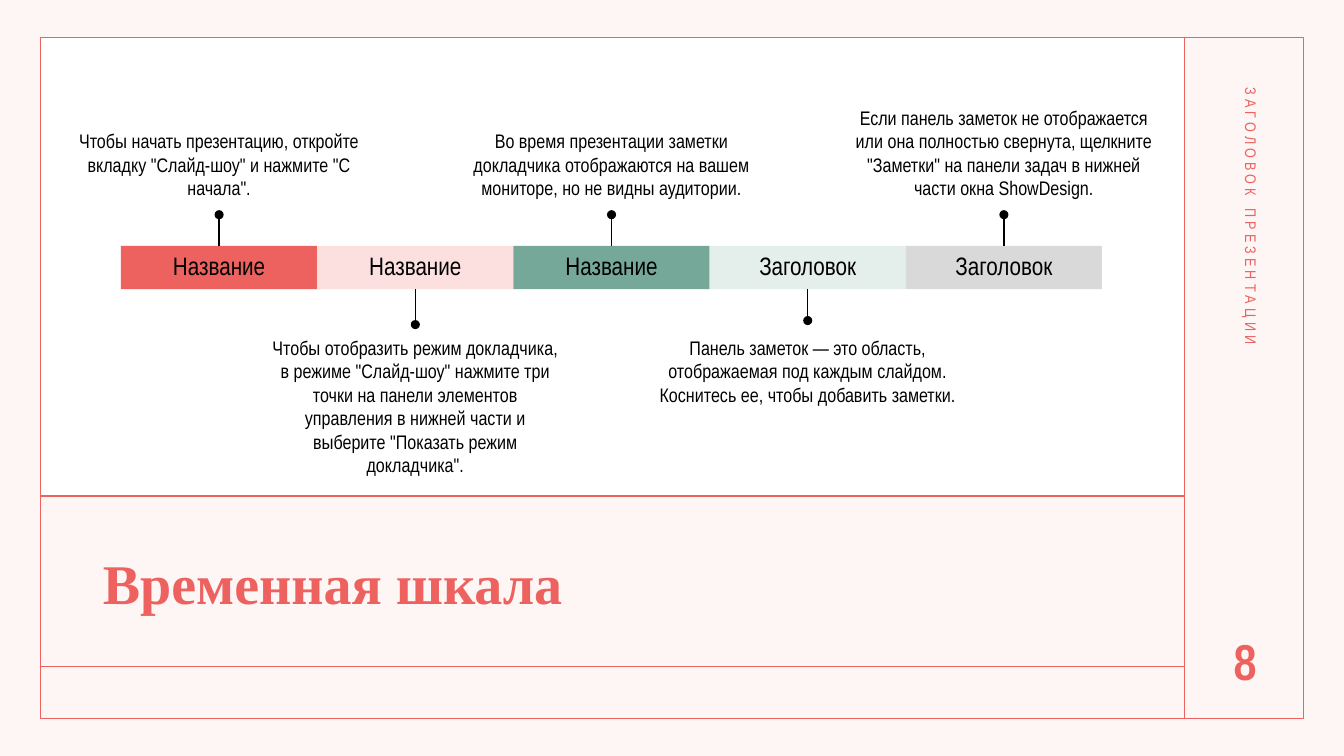
from lxml import etree
from pptx import Presentation
from pptx.dml.color import RGBColor
from pptx.enum.shapes import MSO_CONNECTOR, MSO_SHAPE
from pptx.enum.text import MSO_ANCHOR, PP_ALIGN
from pptx.oxml.ns import qn
from pptx.util import Inches, Pt

RECTANGLE, OVAL = MSO_SHAPE.RECTANGLE, MSO_SHAPE.OVAL
STRAIGHT = MSO_CONNECTOR.STRAIGHT
TOP, MIDDLE, BOTTOM = MSO_ANCHOR.TOP, MSO_ANCHOR.MIDDLE, MSO_ANCHOR.BOTTOM
LEFT, CENTER = PP_ALIGN.LEFT, PP_ALIGN.CENTER

CORAL = RGBColor(0xED, 0x62, 0x5F)
CORAL_LIGHT = RGBColor(0xFB, 0xE0, 0xDF)
GREEN = RGBColor(0x76, 0xA8, 0x99)
GREEN_LIGHT = RGBColor(0xE4, 0xEE, 0xEB)
GRAY = RGBColor(0xD9, 0xD9, 0xD9)
BLUSH = RGBColor(0xFE, 0xF5, 0xF5)
WHITE = RGBColor(0xFF, 0xFF, 0xFF)
BLACK = RGBColor(0, 0, 0)
BODY_FONT, TITLE_FONT = "Arial Narrow", "Times New Roman"

# Content
TITLE = "Временная шкала"
SIDE_LABEL = "ЗАГОЛОВОК ПРЕЗЕНТАЦИИ"
PAGE_NUMBER = "8"
# Name, bar colour, note, note width, distance from bar to dot centre
STEPS = [
    ("Название", CORAL,
     'Чтобы начать презентацию, откройте вкладку "Слайд-шоу" и нажмите "С начала".',
     3.24, 0.31),
    ("Название", CORAL_LIGHT,
     'Чтобы отобразить режим докладчика, в режиме "Слайд-шоу" нажмите три точки на панели '
     'элементов управления в нижней части и выберите "Показать режим докладчика".',
     3.06, 0.35),
    ("Название", GREEN,
     "Во время презентации заметки докладчика отображаются на вашем мониторе, "
     "но не видны аудитории.",
     3.24, 0.31),
    ("Заголовок", GREEN_LIGHT,
     "Панель заметок — это область, отображаемая под каждым слайдом. "
     "Коснитесь ее, чтобы добавить заметки.",
     3.24, 0.31),
    ("Заголовок", GRAY,
     'Если панель заметок не отображается или она полностью свернута, щелкните "Заметки" '
     "на панели задач в нижней части окна ShowDesign.",
     3.24, 0.31),
]

# Grid, in inches
FRAME_LEFT, FRAME_TOP, FRAME_RIGHT, FRAME_BOTTOM = 0.4, 0.37, 12.93, 7.13
SIDE_LEFT = 11.75
PANEL_BOTTOM, TITLE_BOTTOM = 4.92, 6.61
BAR_LEFT, BAR_TOP, BAR_HEIGHT = 1.2, 2.44, 0.43
STEP_WIDTH = 9.73 / len(STEPS)
NOTE_HEIGHT, NOTE_ABOVE, NOTE_BELOW = 1.51, 0.5, 3.3
DOT = 0.09

deck = Presentation()
deck.slide_width, deck.slide_height = Inches(13.33), Inches(7.5)
page = deck.slides.add_slide(deck.slide_layouts[5])
page.background.fill.solid()
page.background.fill.fore_color.rgb = BLUSH


def place(left, top, width, height):
    return [Inches(value) for value in (left, top, width, height)]


def add_block(kind, area, fill=None, line=None):
    block = page.shapes.add_shape(kind, *place(*area))
    block.shadow.inherit = False
    if fill is None:
        block.fill.background()
    else:
        block.fill.solid()
        block.fill.fore_color.rgb = fill
    if line is None:
        block.line.fill.background()
    else:
        block.line.color.rgb = line
        block.line.width = Pt(1)
    return block


def add_rule(x1, y1, x2, y2, color):
    rule = page.shapes.add_connector(STRAIGHT, *place(x1, y1, x2, y2))
    rule.line.color.rgb = color
    rule.line.width = Pt(1)
    etree.SubElement(rule._element.spPr, qn("a:effectLst"))


def write(box, text, size, color=BLACK, font=BODY_FONT, bold=False, align=CENTER,
          anchor=TOP, inset=(0.1, 0.05), line_spacing=1.0, tracking=0):
    frame = box.text_frame
    frame.word_wrap = True
    frame.vertical_anchor = anchor
    frame.margin_left = frame.margin_right = Inches(inset[0])
    frame.margin_top = frame.margin_bottom = Inches(inset[1])
    para = frame.paragraphs[0]
    para.alignment = align
    para.line_spacing = line_spacing
    span = para.add_run()
    span.text = text
    span.font.name, span.font.size, span.font.bold = font, Pt(size), bold
    span.font.color.rgb = color
    if tracking:
        span.font._element.set("spc", str(tracking * 100))


def add_text(area, text, size, **style):
    box = page.shapes.add_textbox(*place(*area))
    write(box, text, size, **style)
    return box


# Panel and frame
add_block(RECTANGLE, (FRAME_LEFT, FRAME_TOP, SIDE_LEFT - FRAME_LEFT,
                      PANEL_BOTTOM - FRAME_TOP), fill=WHITE)
add_rule(SIDE_LEFT, FRAME_TOP, SIDE_LEFT, FRAME_BOTTOM, CORAL)
for y in (PANEL_BOTTOM, TITLE_BOTTOM):
    add_rule(FRAME_LEFT, y, SIDE_LEFT, y, CORAL)
add_block(RECTANGLE, (FRAME_LEFT, FRAME_TOP, FRAME_RIGHT - FRAME_LEFT,
                      FRAME_BOTTOM - FRAME_TOP), line=CORAL)

# Title
title = page.shapes.title
title.left, title.top, title.width, title.height = place(0.92, 5.25, 10.31, 1.14)
write(title, TITLE, 40, color=CORAL, font=TITLE_FONT, bold=True, align=LEFT,
      anchor=MIDDLE, line_spacing=0.9)

# Timeline: notes alternate above and below the bar
for index, (name, color, note, note_width, reach) in enumerate(STEPS):
    left = BAR_LEFT + index * STEP_WIDTH
    middle = left + STEP_WIDTH / 2
    above = index % 2 == 0
    edge = BAR_TOP if above else BAR_TOP + BAR_HEIGHT
    dot_y = edge - reach if above else edge + reach

    bar = add_block(RECTANGLE, (left, BAR_TOP, STEP_WIDTH, BAR_HEIGHT), fill=color)
    write(bar, name, 18, anchor=MIDDLE, inset=(0.03, 0), line_spacing=0.9)
    add_text((middle - note_width / 2, NOTE_ABOVE if above else NOTE_BELOW,
              note_width, NOTE_HEIGHT), note, 14,
             anchor=BOTTOM if above else TOP, inset=(0.06, 0.03))
    add_rule(middle, edge, middle, dot_y, BLACK)
    add_block(OVAL, (middle - DOT / 2, dot_y - DOT / 2, DOT, DOT), fill=BLACK)

# Side strip
side_label = add_text((10.1, 2.82, 4.5, 0.4), SIDE_LABEL, 11, color=CORAL,
                      align=LEFT, tracking=3)
side_label.rotation = 90
add_text((11.83, 6.2, 1.04, 0.83), PAGE_NUMBER, 36, color=CORAL, bold=True)

deck.save("out.pptx")
